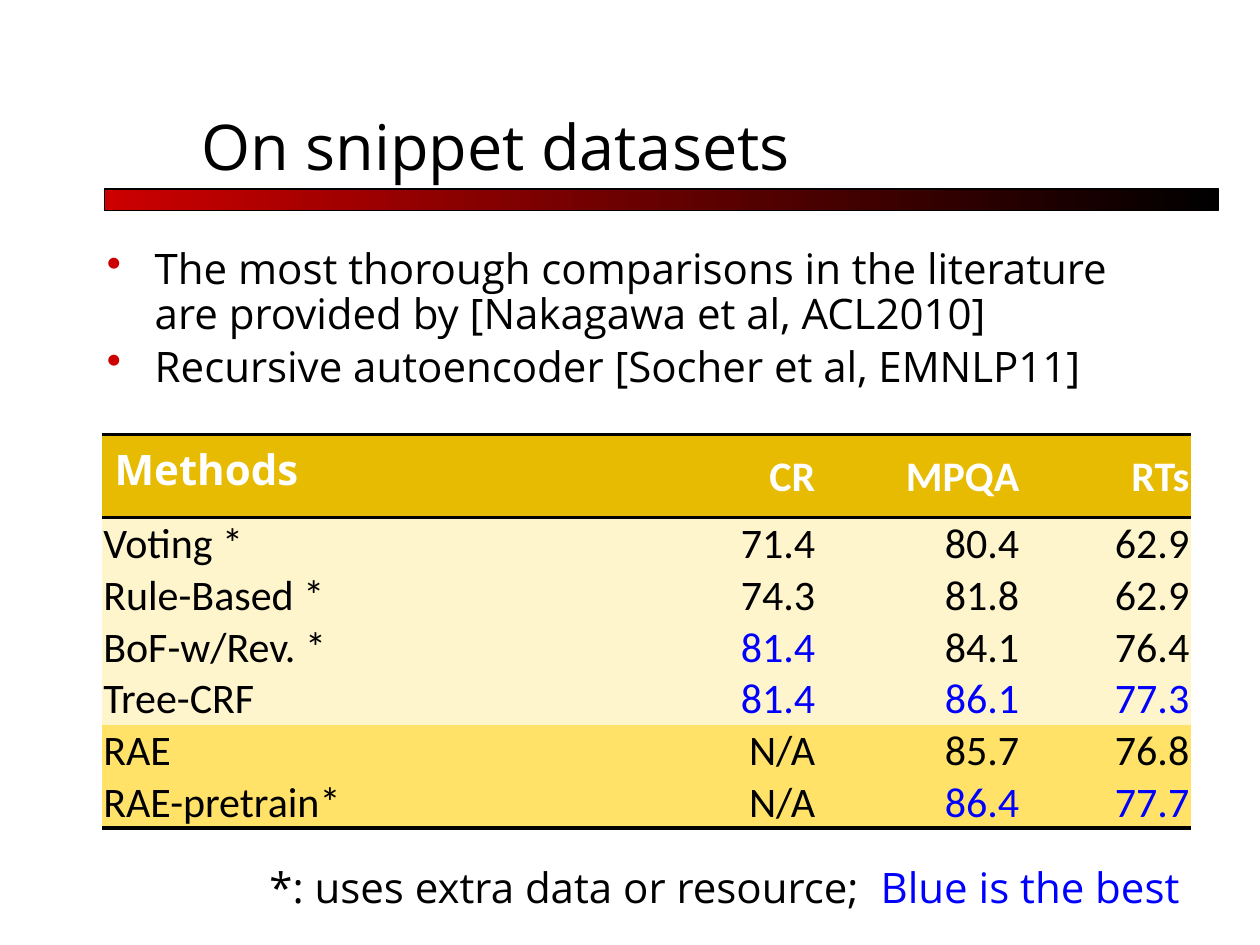
import pptx
import pptx.util
import pptx.dml.color
import pptx.enum.shapes
import pptx.enum.text
import pptx.oxml
import pptx.oxml.ns

Inches, Pt = pptx.util.Inches, pptx.util.Pt
PP_ALIGN, ANCHOR = pptx.enum.text.PP_ALIGN, pptx.enum.text.MSO_ANCHOR

TITLE = "On snippet datasets"
BULLETS = [
    "The most thorough comparisons in the literature are provided by [Nakagawa et al, ACL2010]",
    "Recursive autoencoder [Socher et al, EMNLP11]",
]
ROWS = [
    ("Methods", "CR", "MPQA", "RTs"),
    ("Voting *", "71.4", "80.4", "62.9"),
    ("Rule-Based *", "74.3", "81.8", "62.9"),
    ("BoF-w/Rev. *", "81.4", "84.1", "76.4"),
    ("Tree-CRF", "81.4", "86.1", "77.3"),
    ("RAE", "N/A", "85.7", "76.8"),
    ("RAE-pretrain*", "N/A", "86.4", "77.7"),
]
BEST = {"81.4", "86.1", "86.4", "77.3", "77.7"}
NOTE = [("*: uses extra data or resource;  ", "000000"), ("Blue is the best", "0000FF")]
COL_WIDTHS = [3.82, 1.85, 1.62, 1.35]
ROW_HEIGHTS = [0.66] + [0.41] * 6
ROW_FILLS = ["E7BB01"] + ["FFF5CC"] * 4 + ["FFE267"] * 2
CELL_FORMAT = {
    "margin_left": Inches(0.01),
    "margin_right": Inches(0.01),
    "margin_top": Inches(0.01),
    "margin_bottom": 0,
}


def rgb(value):
    return pptx.dml.color.RGBColor.from_string(value)


def apply(target, formats):
    for name, value in formats.items():
        setattr(target, name, value)


def add_run(p, text, color="000000", size=24, font="Open Sans", bold=False):
    r = p.add_run()
    r.text = text
    apply(r.font, {"name": font, "size": Pt(size), "bold": bold})
    r.font.color.rgb = rgb(color)


def add_text(s, left, top, width, height):
    tf = s.shapes.add_textbox(*map(Inches, (left, top, width, height))).text_frame
    tf.word_wrap = True
    return tf


def add_xml(parent, index, xml):
    ns = pptx.oxml.ns.nsdecls("a")
    parent.insert(index, pptx.oxml.parse_xml(xml.replace("/>", f" {ns}/>", 1) if xml.endswith("/>")
                                             else xml.replace(" ", f" {ns} ", 1)))


def set_bullet(p, color):
    pPr = p._p.get_or_add_pPr()
    apply_indent = {"marL": Inches(0.38), "indent": -Inches(0.38)}
    for name, value in apply_indent.items():
        pPr.set(name, str(int(value)))
    add_xml(pPr, len(pPr), f'<a:buClr ><a:srgbClr val="{color}"/></a:buClr>')
    add_xml(pPr, len(pPr), '<a:buChar char="•"/>')


def set_borders(cell, ruled):
    tcPr = cell._tc.get_or_add_tcPr()
    for i, side in enumerate("LRTB"):
        fill = '<a:solidFill><a:srgbClr val="000000"/></a:solidFill>' if side in ruled else "<a:noFill/>"
        add_xml(tcPr, i, f'<a:ln{side} w="{Pt(2)}">{fill}</a:ln{side}>')


def add_bar(s):
    sp = s.shapes.add_shape(pptx.enum.shapes.MSO_SHAPE.RECTANGLE,
                            *map(Inches, (0.83, 1.5, 8.84, 0.17)))
    sp.shadow.inherit = False
    sp.fill.gradient()
    sp.fill.gradient_angle = 0
    for stop, color in zip(sp.fill.gradient_stops, ("CC0000", "000000")):
        stop.color.rgb = rgb(color)
    sp.line.color.rgb = rgb("000000")
    sp.line.width = Pt(0.75)


def add_results(s):
    table = s.shapes.add_table(len(ROWS), len(COL_WIDTHS),
                               *map(Inches, (0.81, 3.45, sum(COL_WIDTHS), sum(ROW_HEIGHTS)))).table
    apply(table, {"first_row": False, "horz_banding": False})
    for column, width in zip(table.columns, COL_WIDTHS):
        column.width = Inches(width)
    for i, values in enumerate(ROWS):
        table.rows[i].height = Inches(ROW_HEIGHTS[i])
        ruled = ("T" if i in (0, 1) else "") + ("B" if i in (0, len(ROWS) - 1) else "")
        for j, text in enumerate(values):
            cell = table.cell(i, j)
            header, corner = i == 0, i == j == 0
            if not corner:
                apply(cell, CELL_FORMAT)
                cell.vertical_anchor = ANCHOR.MIDDLE if header else ANCHOR.BOTTOM
            cell.fill.solid()
            cell.fill.fore_color.rgb = rgb(ROW_FILLS[i])
            set_borders(cell, ruled)
            p = cell.text_frame.paragraphs[0]
            p.alignment = PP_ALIGN.RIGHT if j else PP_ALIGN.LEFT
            color = "FFFFFF" if header else "0000FF" if text in BEST else "000000"
            add_run(p, text, color, font="Open Sans" if corner else "Calibri", bold=header)


def main():
    prs = pptx.Presentation()
    apply(prs, {"slide_width": Inches(10), "slide_height": Inches(7.5)})
    s = prs.slides.add_slide(prs.slide_layouts[5])
    add_bar(s)

    title = s.shapes.title
    apply(title, dict(zip(("left", "top", "width", "height"), map(Inches, (1.5, 0.42, 8.5, 1.08)))))
    title.text_frame.vertical_anchor = ANCHOR.BOTTOM
    p = title.text_frame.paragraphs[0]
    p.alignment = PP_ALIGN.LEFT
    add_run(p, TITLE, size=36)

    tf = add_text(s, 0.75, 1.92, 8.5, 0.93)
    for i, text in enumerate(BULLETS):
        p = tf.add_paragraph() if i else tf.paragraphs[0]
        set_bullet(p, "CC0000")
        apply(p, {"line_spacing": 0.9, "space_before": Pt(4 if i else 0)})
        add_run(p, text)

    add_results(s)

    p = add_text(s, 0.71, 6.79, 8.75, 0.91).paragraphs[0]
    p.alignment = PP_ALIGN.RIGHT
    for text, color in NOTE:
        add_run(p, text, color)

    prs.save("out.pptx")


if __name__ == "__main__":
    main()
